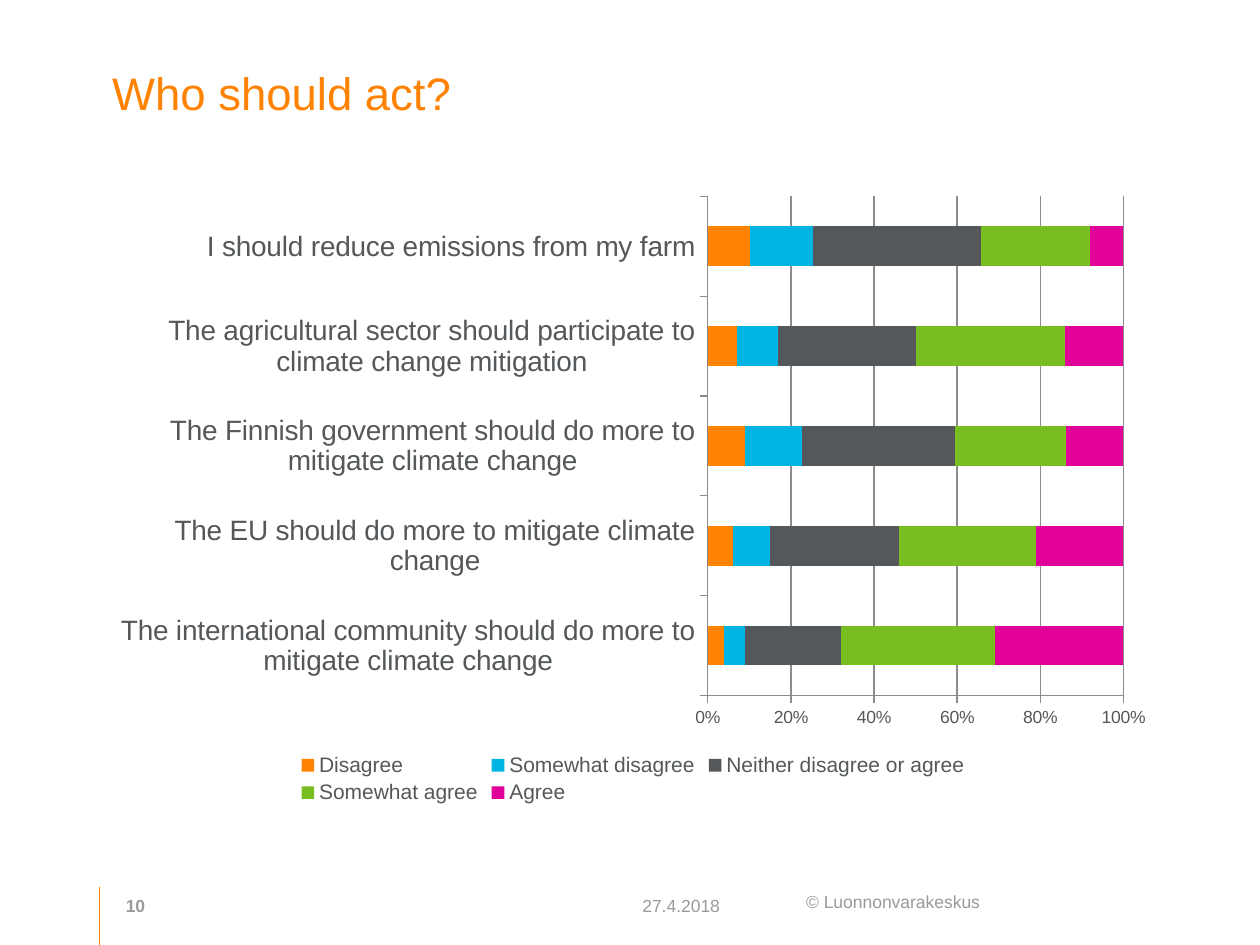
from pptx import Presentation
from pptx.chart.data import CategoryChartData
from pptx.dml.color import RGBColor
from pptx.enum.chart import XL_CHART_TYPE, XL_LEGEND_POSITION, XL_TICK_MARK
from pptx.enum.shapes import MSO_CONNECTOR
from pptx.enum.text import MSO_ANCHOR, PP_ALIGN
from pptx.oxml.ns import qn
from pptx.util import Pt
from lxml.etree import SubElement

ORANGE = RGBColor(0xFF, 0x82, 0x00)
RULE = RGBColor(0xF9, 0x7F, 0x00)
BLUE = RGBColor(0x00, 0xB5, 0xE2)
DARK = RGBColor(0x54, 0x58, 0x5A)
GREEN = RGBColor(0x78, 0xBE, 0x20)
PINK = RGBColor(0xE1, 0x00, 0x98)
GRAY = RGBColor(0x99, 0x9A, 0x9B)
MARK = RGBColor(0x97, 0x9B, 0x9E)
GRID = RGBColor(0x8C, 0x8C, 0x8C)
FACE = "Arial"

TITLE = "Who should act?"
CLAIMS = [
    "The international community should do more to mitigate climate change",
    "The EU should do more to mitigate climate change",
    "The Finnish government should do more to mitigate climate change",
    "The agricultural sector should participate to climate change mitigation",
    "I should reduce emissions from my farm",
]
VIEWS = [
    ("Disagree", ORANGE, (4, 6, 9, 7, 10)),
    ("Somewhat disagree", BLUE, (5, 9, 14, 10, 15)),
    ("Neither disagree or agree", DARK, (23, 31, 37, 33, 40)),
    ("Somewhat agree", GREEN, (37, 33, 27, 36, 26)),
    ("Agree", PINK, (31, 21, 14, 14, 8)),
]
FOOT = [
    ("10", 64.8, 35.3, 21.6, MSO_ANCHOR.BOTTOM, GRAY, True),
    ("27.4.2018", 360, 88.6, 21.6, MSO_ANCHOR.BOTTOM, GRAY, False),
    ("© Luonnonvarakeskus", 453.6, 139.7, 19.4, MSO_ANCHOR.TOP, MARK, False),
]
LEFT = 56.9
BASE = 505.4


def style(font, size, color, bold=False):
    font.name = FACE
    font.size = Pt(size)
    font.color.rgb = color
    font.bold = bold


def put_text(box, text, anchor, size, color, bold=False):
    frame = box.text_frame
    frame.text = text
    frame.word_wrap = True
    frame.vertical_anchor = anchor
    para = frame.paragraphs[0]
    para.alignment = PP_ALIGN.LEFT
    style(para.runs[0].font, size, color, bold)


def add_title(slide):
    box = slide.shapes.title
    box.left, box.top, box.width, box.height = Pt(LEFT), Pt(33.8), Pt(594), Pt(82.1)
    put_text(box, TITLE, MSO_ANCHOR.TOP, 26, ORANGE)


def add_foot(slide):
    for text, left, width, height, anchor, color, bold in FOOT:
        box = slide.shapes.add_textbox(Pt(left), Pt(BASE), Pt(width), Pt(height))
        put_text(box, text, anchor, 10, color, bold)
    line = slide.shapes.add_connector(
        MSO_CONNECTOR.STRAIGHT, Pt(LEFT), Pt(506.9), Pt(LEFT), Pt(540))
    line.line.color.rgb = RULE
    line.line.width = Pt(1)
    SubElement(line.element.spPr, qn("a:effectLst"))


def add_bars(slide):
    data = CategoryChartData()
    data.categories = CLAIMS
    for name, _, vals in VIEWS:
        data.add_series(name, vals)
    chart = slide.shapes.add_chart(
        XL_CHART_TYPE.BAR_STACKED_100, Pt(LEFT), Pt(105.1), Pt(609.8), Pt(357.1), data).chart
    style(chart.font, 10, DARK)
    chart.has_title = False

    plot = chart.plots[0]
    plot.gap_width = 150
    plot.overlap = 100
    plot.vary_by_categories = False
    for bar, (_, color, _) in zip(plot.series, VIEWS):
        bar.format.fill.solid()
        bar.format.fill.fore_color.rgb = color

    for axis, size in ((chart.category_axis, 16), (chart.value_axis, 10)):
        axis.major_tick_mark = XL_TICK_MARK.OUTSIDE
        axis.minor_tick_mark = XL_TICK_MARK.NONE
        axis.format.line.color.rgb = GRID
        style(axis.tick_labels.font, size, DARK)
    chart.category_axis.has_major_gridlines = False
    scale = chart.value_axis
    scale.has_major_gridlines = True
    scale.major_gridlines.format.line.color.rgb = GRID
    scale.tick_labels.number_format = "0%"
    scale.tick_labels.number_format_is_linked = False

    chart.has_legend = True
    chart.legend.position = XL_LEGEND_POSITION.BOTTOM
    chart.legend.include_in_layout = False
    style(chart.legend.font, 12, DARK)


def main():
    deck = Presentation()
    deck.slide_width, deck.slide_height = Pt(720), Pt(540)
    slide = deck.slides.add_slide(deck.slide_layouts[5])
    add_title(slide)
    add_foot(slide)
    add_bars(slide)
    deck.save("out.pptx")


if __name__ == "__main__":
    main()
